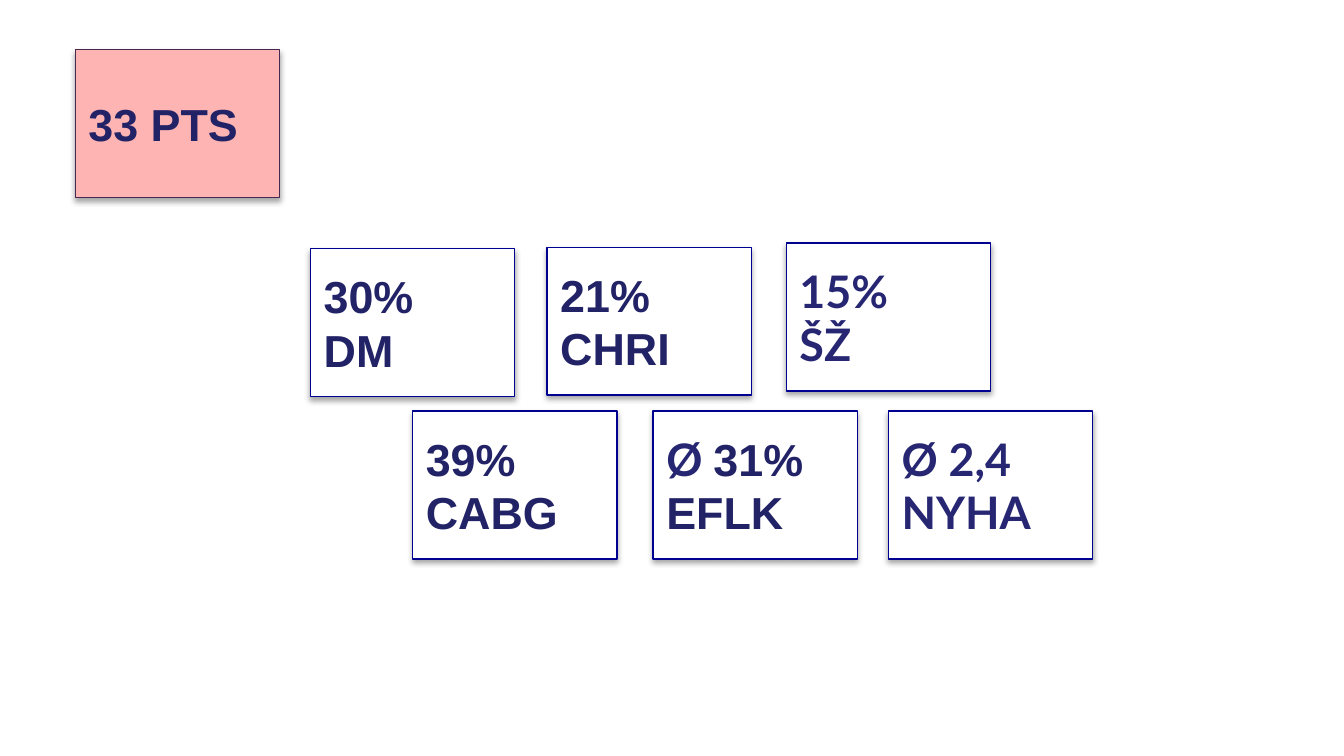
from dataclasses import dataclass

from pptx import Presentation
from pptx import util as u
from pptx.dml.color import RGBColor
from pptx.enum import shapes, text


@dataclass(frozen=True)
class Theme:
    navy: str = "222267"
    indigo: str = "262673"
    edge: str = "000090"
    total_edge: str = "472850"
    paper: str = "FFFFFF"
    pink: str = "FEB4B2"
    size: float = 24
    line: float = 0.75


THEME = Theme()
ARIAL = ("Arial", THEME.navy)
LATO = ("Lato", THEME.indigo)

SLIDE_W = u.Inches(10)
SLIDE_H = SLIDE_W * 9 // 16
CARD_W, CARD_H = 1.52, 1.1
COL_PITCH = 1.77
ROW_LEFTS = (2.31, 3.07)
ROW_TOPS = (1.85, 3.06)

# row, column, (nudge right, nudge down), paragraphs of (text, style) runs
CARDS = [
    (0, 0, (0, 0), [[("30%", ARIAL)], [("DM", ARIAL)]]),
    (0, 1, (-0.01, -0.01), [[("21% CHRI", ARIAL)]]),
    (1, 0, (0, 0), [[("39%", ARIAL)], [("CABG", ARIAL)]]),
    (1, 1, (0.02, 0), [[("Ø ", LATO), ("31% EFLK", ARIAL)]]),
    (0, 2, (0, -0.04), [[("15%", LATO)], [("ŠŽ", LATO)]]),
    (1, 2, (0, 0), [[("Ø 2,4 NYHA", LATO)]]),
]


def rgb(value):
    return RGBColor.from_string(value)


def add_run(p, words, style):
    r = p.add_run()
    r.text = words
    r.font.name, colour = style
    r.font.size = u.Pt(THEME.size)
    r.font.bold = True
    r.font.color.rgb = rgb(colour)


def add_card(s, left, top, paragraphs, fill=THEME.paper, edge=THEME.edge):
    """Draw a card that keeps the soft shadow of the document theme."""
    sp = s.shapes.add_shape(
        shapes.MSO_SHAPE.RECTANGLE,
        *(u.Inches(n) for n in (left, top, CARD_W, CARD_H)))
    sp.fill.solid()
    sp.fill.fore_color.rgb = rgb(fill)
    sp.line.color.rgb = rgb(edge)
    sp.line.width = u.Pt(THEME.line)

    tf = sp.text_frame
    tf.word_wrap = True
    tf.vertical_anchor = text.MSO_ANCHOR.MIDDLE
    for i, runs in enumerate(paragraphs):
        p = tf.add_paragraph() if i else tf.paragraphs[0]
        p.alignment = text.PP_ALIGN.LEFT
        for words, style in runs:
            add_run(p, words, style)


def main():
    prs = Presentation()
    prs.slide_width, prs.slide_height = SLIDE_W, SLIDE_H
    s = prs.slides.add_slide(prs.slide_layouts[6])

    add_card(s, 0.56, 0.37, [[("33 PTS", ARIAL)]], THEME.pink, THEME.total_edge)
    for row, col, (dx, dy), paragraphs in CARDS:
        add_card(s, ROW_LEFTS[row] + col * COL_PITCH + dx,
                 ROW_TOPS[row] + dy, paragraphs)

    prs.save("out.pptx")


if __name__ == "__main__":
    main()
